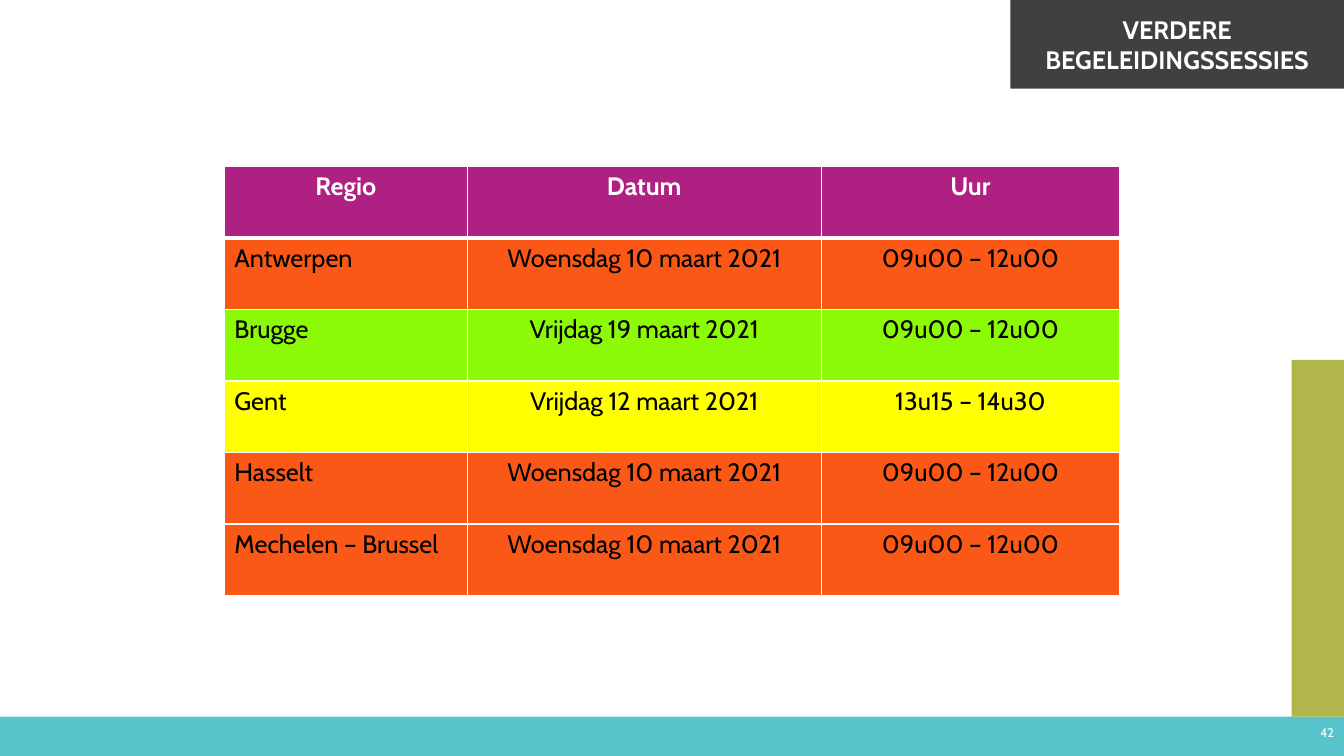
from lxml import etree
from pptx import Presentation, util as u
from pptx.dml.color import RGBColor
from pptx.enum import shapes, text
from pptx.oxml import ns

FONT = "Cabin"
WHITE, BLACK, DARK = "FFFFFF", "000000", "404040"
TEAL, OLIVE, PURPLE = "57C3CB", "B1B64A", "AE2081"
ORANGE, GREEN, YELLOW = "F95817", "8CFA06", "FFFF00"
CENTER, LEFT, RIGHT = text.PP_ALIGN.CENTER, text.PP_ALIGN.LEFT, text.PP_ALIGN.RIGHT
WIDTH, HEIGHT = 13.33, 7.5


def paint(target, color):
    """Give a fill or a font a solid colour from a hex string."""
    if hasattr(target, "solid"):
        target.solid()
        target.fore_color.rgb = RGBColor.from_string(color)
    else:
        target.color.rgb = RGBColor.from_string(color)


def write(text_frame, words, size, color, align, bold=False):
    text_frame.text = words
    text_frame.word_wrap = True
    paragraph = text_frame.paragraphs[0]
    paragraph.alignment = align
    font = paragraph.runs[0].font
    font.name, font.size, font.bold = FONT, u.Pt(size), bold
    paint(font, color)


presentation = Presentation()
presentation.slide_width, presentation.slide_height = u.Inches(WIDTH), u.Inches(HEIGHT)
slide = presentation.slides.add_slide(presentation.slide_layouts[6])

# Footer bar, side block and title block
footer_height, side_width, side_height = 0.39, 0.52, 3.54
title_width, title_height = 3.31, 0.88
footer_top = HEIGHT - footer_height
blocks = [
    (0, footer_top, WIDTH, footer_height, TEAL),
    (WIDTH - side_width, footer_top - side_height, side_width, side_height, OLIVE),
    (WIDTH - title_width, 0, title_width, title_height, DARK),
]
for *box, color in blocks:
    shape = slide.shapes.add_shape(shapes.MSO_SHAPE.RECTANGLE, *map(u.Inches, box))
    shape.shadow.inherit = False
    shape.line.fill.background()
    paint(shape.fill, color)
title = shape.text_frame
title.vertical_anchor = text.MSO_ANCHOR.MIDDLE
write(title, "VERDERE BEGELEIDINGSSESSIES", 18, WHITE, CENTER, bold=True)

# Page number
number_width, number_height = 3, 0.47
number = slide.shapes.add_textbox(
    u.Inches(WIDTH - number_width), u.Inches(HEIGHT - number_height),
    u.Inches(number_width), u.Inches(number_height)).text_frame
number.vertical_anchor = text.MSO_ANCHOR.MIDDLE
write(number, "42", 9, WHITE, RIGHT)

# Table of sessions
sessions = [
    (PURPLE, "Regio", "Datum", "Uur"),
    (ORANGE, "Antwerpen", "Woensdag 10 maart 2021", "09u00 – 12u00"),
    (GREEN, "Brugge", "Vrijdag 19 maart 2021", "09u00 – 12u00"),
    (YELLOW, "Gent", "Vrijdag 12 maart 2021", "13u15 – 14u30"),
    (ORANGE, "Hasselt", "Woensdag 10 maart 2021", "09u00 – 12u00"),
    (ORANGE, "Mechelen – Brussel", "Woensdag 10 maart 2021", "09u00 – 12u00"),
]
column_widths, row_height = [2.41, 3.51, 2.96], 0.71
table_width = sum(column_widths)
table = slide.shapes.add_table(
    len(sessions), len(column_widths),
    u.Inches((WIDTH - table_width) / 2), u.Inches(1.65),
    u.Inches(table_width), u.Inches(row_height * len(sessions))).table
for column, width in zip(table.columns, column_widths):
    column.width = u.Inches(width)

for row_index, (fill_color, *words) in enumerate(sessions):
    header = row_index == 0
    for column_index, label in enumerate(words):
        cell = table.cell(row_index, column_index)
        properties = cell._tc.get_or_add_tcPr()
        for side in ("L", "R", "T", "B"):
            under_header = (row_index, side) in ((0, "B"), (1, "T"))
            border = etree.SubElement(properties, ns.qn(f"a:ln{side}"),
                                      w=str(u.Pt(3 if under_header else 1)))
            border_fill = etree.SubElement(border, ns.qn("a:solidFill"))
            etree.SubElement(border_fill, ns.qn("a:srgbClr"), val=WHITE)
        paint(cell.fill, fill_color)
        align = CENTER if header or column_index else LEFT
        write(cell.text_frame, label, 18, WHITE if header else BLACK, align, bold=header)

presentation.save("out.pptx")
